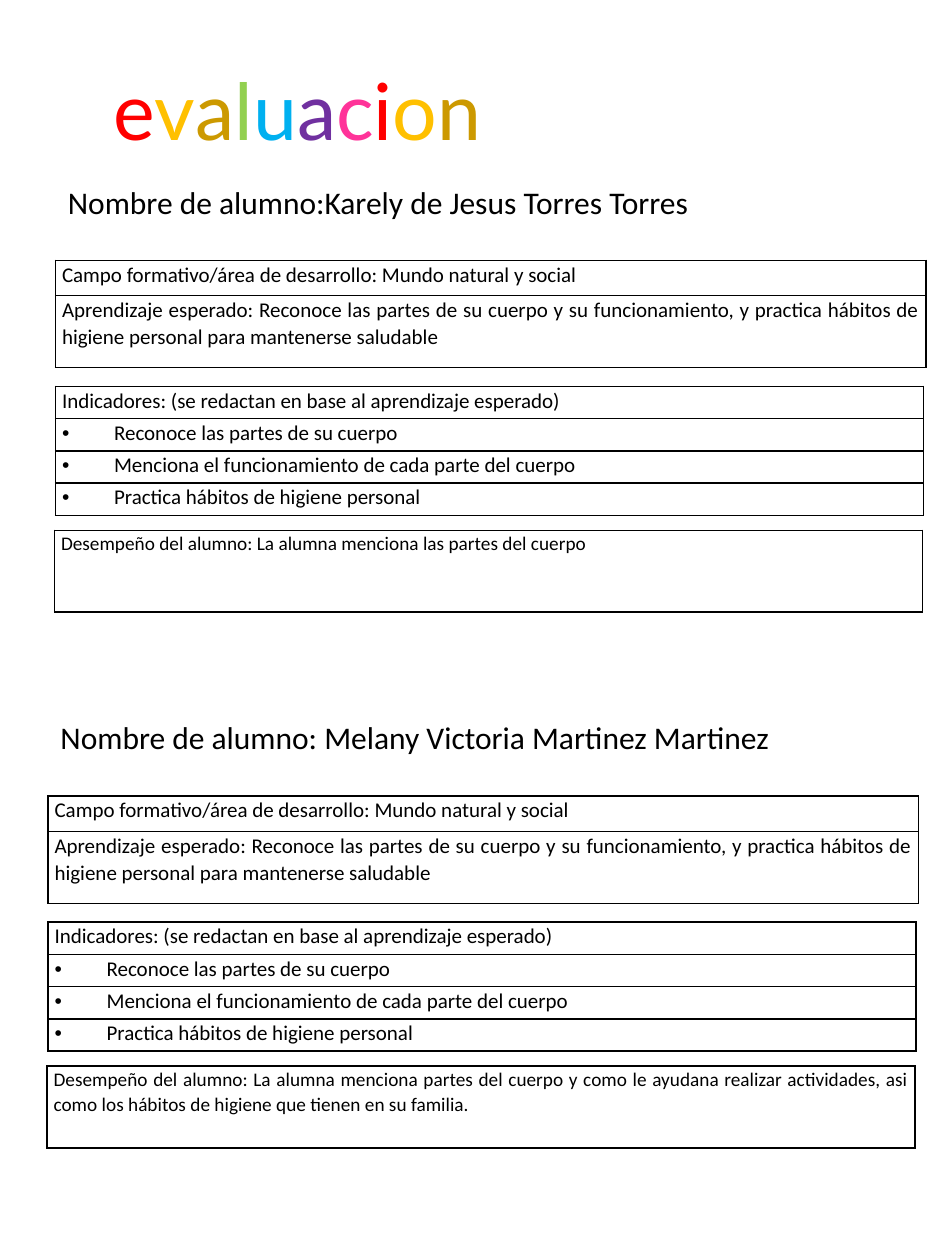
from dataclasses import dataclass

from lxml import etree
from pptx import Presentation
from pptx import util as u
from pptx.dml import color
from pptx.enum import text
from pptx.oxml import ns


@dataclass(frozen=True)
class Theme:
    ink: str = "000000"
    rainbow: tuple = ("FF0000", "FFC000", "CC9900", "92D050", "00B0F0",
                      "7030A0", "FF3399", "FF0000", "FFC000", "CC9900")
    title_font: str = "Lato"
    body_font: str = "Calibri"
    title_size: int = 45
    name_size: int = 18
    body_size: int = 12
    note_size: int = 11
    border: int = 1


THEME = Theme()
FIELD = [
    "Campo formativo/área de desarrollo: Mundo natural y social",
    "Aprendizaje esperado: Reconoce las partes de su cuerpo y su funcionamiento, "
    "y practica hábitos de higiene personal para mantenerse saludable",
]
INDICATORS = [
    "Indicadores: (se redactan en base al aprendizaje esperado)",
    "Reconoce las partes de su cuerpo",
    "Menciona el funcionamiento de cada parte del cuerpo",
    "Practica hábitos de higiene personal",
]
# Left and top of each block in cm, heading, performance note
STUDENTS = [
    (1.12, 3.56, "Nombre de alumno:Karely de Jesus Torres Torres",
     "Desempeño del alumno: La alumna menciona las partes del cuerpo"),
    (0.97, 14.36, "Nombre de alumno: Melany Victoria Martinez Martinez",
     "Desempeño del alumno: La alumna menciona partes del cuerpo y como le ayudana "
     "realizar actividades, asi como los hábitos de higiene que tienen en su familia."),
]


def apply(target, values):
    for name, value in values.items():
        setattr(target, name, value)


def add_span(para, words, size, font, ink):
    span = para.add_run()
    span.text = words
    apply(span.font, {"size": u.Pt(size), "name": font, "bold": False})
    span.font.color.rgb = color.RGBColor.from_string(ink)


def add_bullet(para, indent):
    props = para._p.get_or_add_pPr()
    props.set("marL", str(indent))
    props.set("indent", str(-indent))
    etree.SubElement(props, ns.qn("a:buFont")).set("typeface", "Arial")
    etree.SubElement(props, ns.qn("a:buChar")).set("char", "•")


def add_borders(cell):
    props = cell._tc.get_or_add_tcPr()
    for place, side in enumerate(("lnL", "lnR", "lnT", "lnB")):
        line = etree.Element(ns.qn("a:" + side), w=str(u.Pt(THEME.border)))
        fill = etree.SubElement(line, ns.qn("a:solidFill"))
        etree.SubElement(fill, ns.qn("a:srgbClr")).set("val", THEME.ink)
        props.insert(place, line)


def add_grid(page, left, top, width, heights, lines, size, bulleted=False):
    """One-column bordered table; bullets start after its first row."""
    table = page.shapes.add_table(len(lines), 1, u.Cm(left), u.Cm(top),
                                  u.Cm(width), u.Cm(sum(heights))).table
    apply(table, {"first_row": False, "horz_banding": False})
    for index, (height, words) in enumerate(zip(heights, lines)):
        table.rows[index].height = u.Cm(height)
        cell = table.cell(index, 0)
        apply(cell, {"margin_left": u.Cm(0.13), "margin_right": u.Cm(0.13),
                     "margin_top": 0, "margin_bottom": 0})
        cell.fill.background()
        add_borders(cell)
        para = cell.text_frame.paragraphs[0]
        apply(para, {"alignment": text.PP_ALIGN.JUSTIFY, "line_spacing": 1.07})
        if bulleted and index:
            add_bullet(para, u.Cm(1.05))
        add_span(para, words, size, THEME.body_font, THEME.ink)


def add_title(page, left, top, width, height):
    box = page.shapes.title
    apply(box, {"left": u.Cm(left), "top": u.Cm(top),
                "width": u.Cm(width), "height": u.Cm(height)})
    apply(box.text_frame, {"vertical_anchor": text.MSO_ANCHOR.TOP, "word_wrap": True,
                           "auto_size": text.MSO_AUTO_SIZE.NONE})
    para = box.text_frame.paragraphs[0]
    para.alignment = text.PP_ALIGN.LEFT
    for letter, ink in zip("evaluacion", THEME.rainbow):
        add_span(para, letter, THEME.title_size, THEME.title_font, ink)


def add_student(page, left, top, name, note):
    # Student name
    box = page.shapes.add_textbox(u.Cm(left), u.Cm(top), u.Cm(15), u.Cm(1.02))
    box.text_frame.word_wrap = True
    add_span(box.text_frame.paragraphs[0], name, THEME.name_size,
             THEME.body_font, THEME.ink)
    # Field, indicators and performance
    add_grid(page, left, top + 1.69, 17.55, [0.71, 1.45], FIELD, THEME.body_size)
    add_grid(page, left, top + 4.23, 17.5, [0.65] * 4, INDICATORS,
             THEME.body_size, bulleted=True)
    add_grid(page, left - 0.02, top + 7.13, 17.5, [1.65], [note], THEME.note_size)


def main():
    deck = Presentation()
    apply(deck, {"slide_width": u.Cm(19.05), "slide_height": u.Cm(25.4)})
    page = deck.slides.add_slide(deck.slide_layouts.get_by_name("Title Only"))
    add_title(page, 2.03, 1.12, 17.02, 2.18)
    for student in STUDENTS:
        add_student(page, *student)
    deck.save("out.pptx")


if __name__ == "__main__":
    main()
